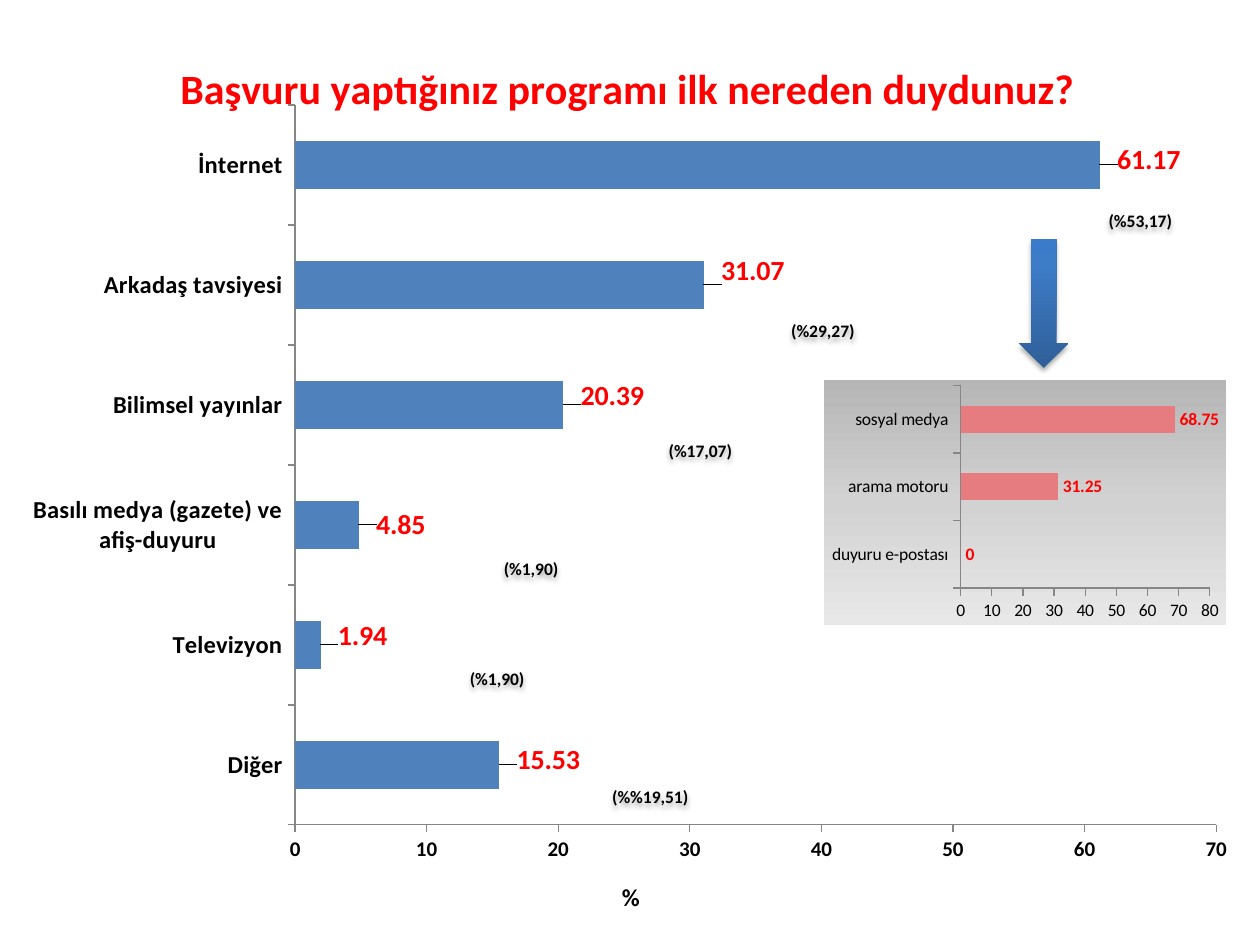
from dataclasses import dataclass

from lxml import etree
from pptx import Presentation
from pptx import util as u
from pptx.chart.data import CategoryChartData
from pptx.dml.color import RGBColor
from pptx.enum import chart as ch, shapes
from pptx.oxml import parse_xml
from pptx.oxml.ns import nsdecls, qn

Pt = u.Pt


@dataclass(frozen=True)
class Theme:
    font: str = "Calibri"
    ink: str = "000000"
    accent: str = "FF0000"
    axis: str = "868686"
    bar: str = "4F81BD"
    inset_bar: str = "E67C7F"
    inset_fill: tuple = ((0, "B6B6B6"), (50, "D2D2D2"), (100, "E8E8E8"))
    arrow_fill: tuple = ((0, "2F5F99"), (80, "3D7CC7"), (100, "3A7CCB"))
    title: int = 24
    value: int = 16
    category: int = 14
    scale: int = 12
    small: int = 10


def gradient(stops, angle):
    marks = "".join(f'<a:gs pos="{pos * 1000}"><a:srgbClr val="{color}"/></a:gs>'
                    for pos, color in stops)
    return (f'<a:gradFill {nsdecls("a")} rotWithShape="1"><a:gsLst>{marks}</a:gsLst>'
            f'<a:lin ang="{angle * 60000}" scaled="0"/></a:gradFill>')


def set_layout(parent, index, **values):
    """Give a chart part a manual layout, as fractions of the chart."""
    for old in parent.findall(qn("c:layout")):
        parent.remove(old)
    layout = parse_xml(f'<c:layout {nsdecls("c")}><c:manualLayout/></c:layout>')
    for tag, value in values.items():
        etree.SubElement(layout[0], qn(f"c:{tag}")).set("val", str(value))
    parent.insert(index, layout)


class SlideWriter:
    def __init__(self, slide, theme):
        self.slide, self.theme = slide, theme

    def font(self, font, size, color=None, bold=False):
        font.name, font.size, font.bold = self.theme.font, Pt(size), bold
        font.color.rgb = RGBColor.from_string(color or self.theme.ink)

    def shadow(self, shape):
        shape._element.spPr.append(parse_xml(
            f'<a:effectLst {nsdecls("a")}><a:outerShdw blurRad="{Pt(3.1)}" dist="{Pt(1.8)}" '
            'dir="5400000" rotWithShape="0"><a:srgbClr val="000000"><a:alpha val="35000"/>'
            '</a:srgbClr></a:outerShdw></a:effectLst>'))

    def bar_chart(self, box, data, color, top, plot, category_size, scale_size,
                  value_size, bold):
        chart_data = CategoryChartData()
        chart_data.categories = list(data)
        chart_data.add_series("Series 1", list(data.values()))
        chart = self.slide.shapes.add_chart(
            ch.XL_CHART_TYPE.BAR_CLUSTERED, *map(Pt, box), chart_data).chart
        chart.has_legend = chart.has_title = False
        self.font(chart.font, self.theme.small)
        bars = chart.plots[0]
        bars.gap_width, bars.vary_by_categories = 150, False
        fill = bars.series[0].format.fill
        fill.solid()
        fill.fore_color.rgb = RGBColor.from_string(color)
        # Axes
        scale = chart.value_axis
        scale.minimum_scale, scale.maximum_scale, scale.major_unit = 0, top, 10
        scale.has_major_gridlines = False
        for axis, size in ((chart.category_axis, category_size), (scale, scale_size)):
            axis.major_tick_mark = ch.XL_TICK_MARK.OUTSIDE
            axis.format.line.color.rgb = RGBColor.from_string(self.theme.axis)
            axis.format.line.width = Pt(0.75)
            self.font(axis.tick_labels.font, size, bold=bold)
        # Values beside the bars
        labels = bars.series[0].data_labels
        labels.show_value = True
        labels.position = ch.XL_LABEL_POSITION.OUTSIDE_END
        self.font(labels.font, value_size, self.theme.accent, True)
        x, y, w, h = plot
        set_layout(chart._chartSpace.chart.plotArea, 0, layoutTarget="inner",
                   xMode="edge", yMode="edge", x=x, y=y, w=w, h=h)
        return chart

    def chart_text(self, owner, content, size, color, x, y):
        title = owner.chart_title if hasattr(owner, "chart_title") else owner.axis_title
        title.text_frame.text = content
        self.font(title.text_frame.paragraphs[0].font, size, color, True)
        set_layout(title._element, 1, xMode="edge", yMode="edge", x=x, y=y)

    def shift_labels(self, chart, dx, rises):
        for index, rise in enumerate(rises):
            label = chart.plots[0].series[0].points[index].data_label
            self.font(label.font, self.theme.value, self.theme.accent, True)
            label.position = ch.XL_LABEL_POSITION.OUTSIDE_END
            element = chart._chartSpace.xpath(f".//c:dLbl[c:idx/@val={index}]")[0]
            set_layout(element, 1, x=dx, y=-rise)

    def chart_background(self, chart, stops):
        chart._chartSpace.chart.addnext(parse_xml(
            f'<c:spPr {nsdecls("c", "a")}>{gradient(stops, 90)}'
            '<a:ln><a:noFill/></a:ln></c:spPr>'))

    def note(self, content, left, top, width=100, height=20):
        box = self.slide.shapes.add_textbox(*map(Pt, (left, top, width, height)))
        box.text_frame.word_wrap = True
        paragraph = box.text_frame.paragraphs[0]
        paragraph.text = content
        self.font(paragraph.font, self.theme.small, bold=True)
        self.shadow(box)

    def down_arrow(self, box, stops):
        arrow = self.slide.shapes.add_shape(shapes.MSO_SHAPE.DOWN_ARROW, *map(Pt, box))
        arrow._element.spPr.append(parse_xml(gradient(stops, 270)))
        arrow.line.fill.background()
        self.shadow(arrow)


def main():
    deck = Presentation()
    deck.slide_width, deck.slide_height = Pt(720), Pt(540)
    theme = Theme()
    writer = SlideWriter(deck.slides.add_slide(deck.slide_layouts[6]), theme)

    # Where applicants heard of the programme
    sources = {"Diğer": 15.53, "Televizyon": 1.94,
               "Basılı medya (gazete) ve afiş-duyuru": 4.85,
               "Bilimsel yayınlar": 20.39, "Arkadaş tavsiyesi": 31.07, "İnternet": 61.17}
    survey = writer.bar_chart((0, 15, 705.6, 511.2), sources, theme.bar, 70,
                              (0.239, 0.089, 0.746, 0.813), theme.category,
                              theme.scale, theme.value, True)
    writer.chart_text(survey, "Başvuru yaptığınız programı ilk nereden duydunuz?",
                      theme.title, theme.accent, 0.14, 0.03)
    writer.chart_text(survey.value_axis, "%", theme.category, theme.ink, 0.5, 0.96)
    survey.value_axis.tick_labels.number_format = "0"
    survey.value_axis.tick_labels.number_format_is_linked = False
    values = survey.plots[0].series[0].data_labels
    values.number_format, values.number_format_is_linked = "0.00", False
    writer.shift_labels(survey, 0.01, (0.005, 0.01, 0, 0.01, 0.015, 0.005))

    # Earlier shares in brackets
    for share, left, top in (("(%53,17)", 626.4, 116.6), ("(%29,27)", 445, 179.3),
                             ("(%17,07)", 375, 247.7), ("(%1,90)", 280.8, 315.4),
                             ("(%1,90)", 261.4, 378), ("(%%19,51)", 342.7, 445.7)):
        writer.note(share, left, top)

    # Breakdown of the internet answers
    channels = {"duyuru e-postası": 0, "arama motoru": 31.25, "sosyal medya": 68.75}
    breakdown = writer.bar_chart((470.9, 217.4, 229.7, 139.7), channels, theme.inset_bar,
                                 80, (0.34, 0.02, 0.62, 0.83), theme.small,
                                 theme.small, theme.small, False)
    writer.chart_background(breakdown, theme.inset_fill)
    writer.down_arrow((582.5, 136.8, 28, 73.4), theme.arrow_fill)

    deck.save("out.pptx")


if __name__ == "__main__":
    main()
